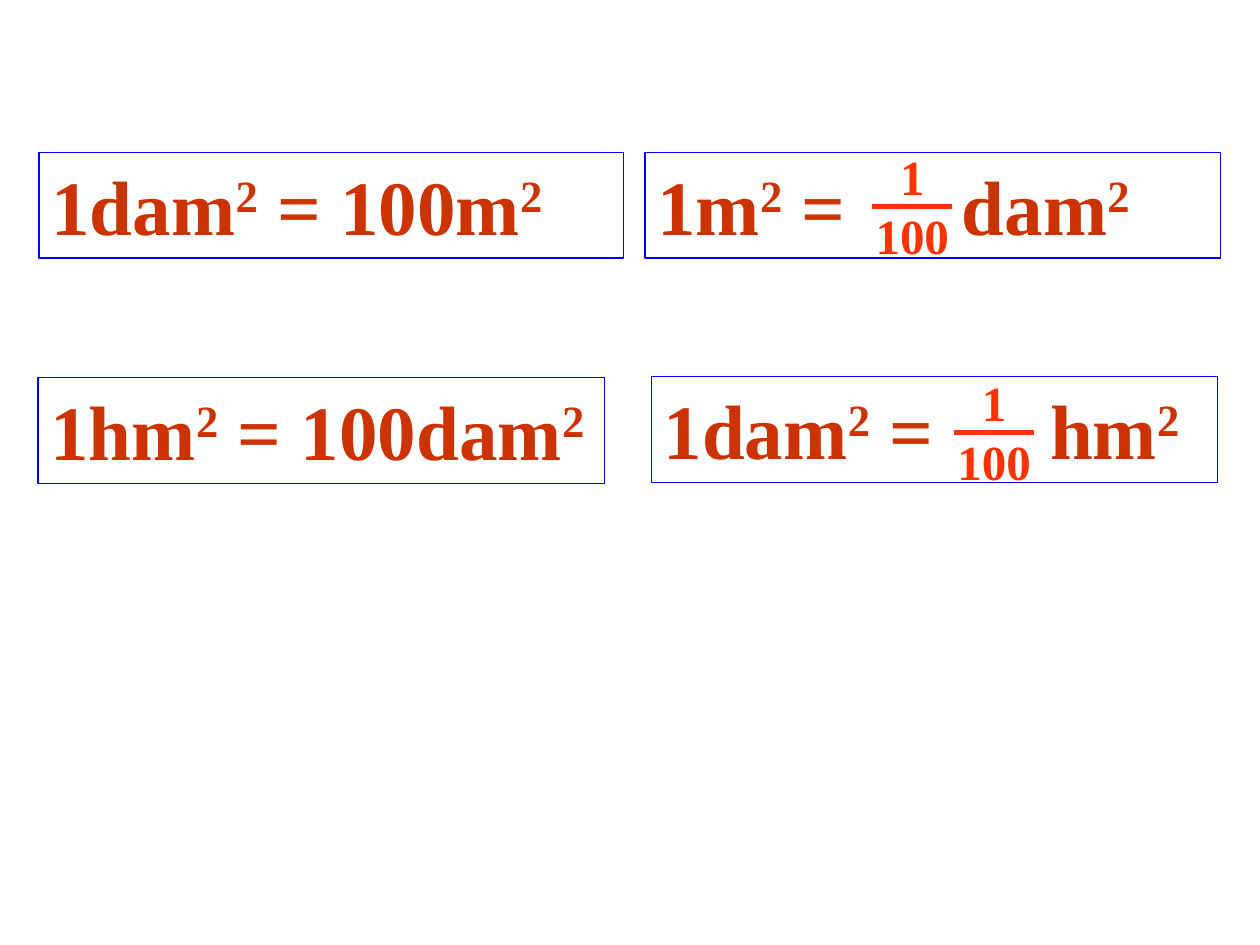
from lxml.etree import SubElement
from pptx import Presentation
from pptx.dml.color import RGBColor
from pptx.enum.shapes import MSO_CONNECTOR, MSO_SHAPE
from pptx.enum.text import MSO_ANCHOR, PP_ALIGN
from pptx.oxml.ns import qn
from pptx.util import Pt

BLUE = RGBColor(0x00, 0x00, 0xFF)
BRICK = RGBColor(0xCC, 0x33, 0x00)
RED = RGBColor(0xFF, 0x33, 0x00)
FONT = "Times New Roman"
EXPONENT = "2"
BOX_HEIGHT = 60.5
FRACTION_WIDTH, FRACTION_HEIGHT = 56, 74
BAR_WIDTH, BAR_DROP = 46, 38

EQUATIONS = [
    {"terms": ["1dam", " = 100m"], "left": 22.3, "top": 87, "width": 334},
    {"terms": ["1hm", " = 100dam"], "left": 21.8, "top": 215.7, "width": 323.5},
    {"terms": ["1m", " =\tdam"], "left": 368.6, "top": 87, "width": 329, "tab": 174},
    {"terms": ["1dam", " =\thm"], "left": 372.2, "top": 215.2, "width": 323.5, "tab": 220.8},
]
FRACTIONS = [
    {"lines": ["1", "100"], "left": 493.3, "top": 80},
    {"lines": ["1", "100"], "left": 540.1, "top": 209.3},
]


def add_run(paragraph, text, size, color, superscript=False):
    run = paragraph.add_run()
    run.text = text
    run.font.name = FONT
    run.font.size = Pt(size)
    run.font.bold = True
    run.font.color.rgb = color
    if superscript:
        run.font._element.set("baseline", "30000")


def add_equation(slide, terms, left, top, width, tab=None):
    shape = slide.shapes.add_shape(
        MSO_SHAPE.RECTANGLE, Pt(left), Pt(top), Pt(width), Pt(BOX_HEIGHT))
    shape.shadow.inherit = False
    shape.fill.background()
    shape.line.color.rgb = BLUE
    shape.line.width = Pt(0.75)
    frame = shape.text_frame
    frame.word_wrap = True
    frame.vertical_anchor = MSO_ANCHOR.TOP
    paragraph = frame.paragraphs[0]
    paragraph.alignment = PP_ALIGN.LEFT
    if tab:
        tab_list = SubElement(paragraph._p.get_or_add_pPr(), qn("a:tabLst"))
        SubElement(tab_list, qn("a:tab"), pos=str(int(Pt(tab))), algn="l")
    for term in terms:
        add_run(paragraph, term, 44, BRICK)
        add_run(paragraph, EXPONENT, 44, BRICK, superscript=True)


def add_fraction(slide, lines, left, top):
    group = slide.shapes.add_group_shape()
    box = group.shapes.add_textbox(
        Pt(left), Pt(top), Pt(FRACTION_WIDTH), Pt(FRACTION_HEIGHT))
    frame = box.text_frame
    frame.word_wrap = True
    frame.margin_left = frame.margin_right = Pt(0)
    for index, line in enumerate(lines):
        paragraph = frame.add_paragraph() if index else frame.paragraphs[0]
        paragraph.alignment = PP_ALIGN.CENTER
        add_run(paragraph, line, 28, RED)
    bar_left = left + (FRACTION_WIDTH - BAR_WIDTH) / 2
    bar_top = top + BAR_DROP
    bar = group.shapes.add_connector(
        MSO_CONNECTOR.STRAIGHT, Pt(bar_left), Pt(bar_top),
        Pt(bar_left + BAR_WIDTH), Pt(bar_top))
    bar.line.color.rgb = RED
    bar.line.width = Pt(3)
    SubElement(bar._element.spPr, qn("a:effectLst"))


def main():
    presentation = Presentation()
    presentation.slide_width, presentation.slide_height = Pt(720), Pt(540)
    slide = presentation.slides.add_slide(presentation.slide_layouts[6])
    for equation in EQUATIONS:
        add_equation(slide, **equation)
    for fraction in FRACTIONS:
        add_fraction(slide, **fraction)
    presentation.save("out.pptx")


if __name__ == "__main__":
    main()
